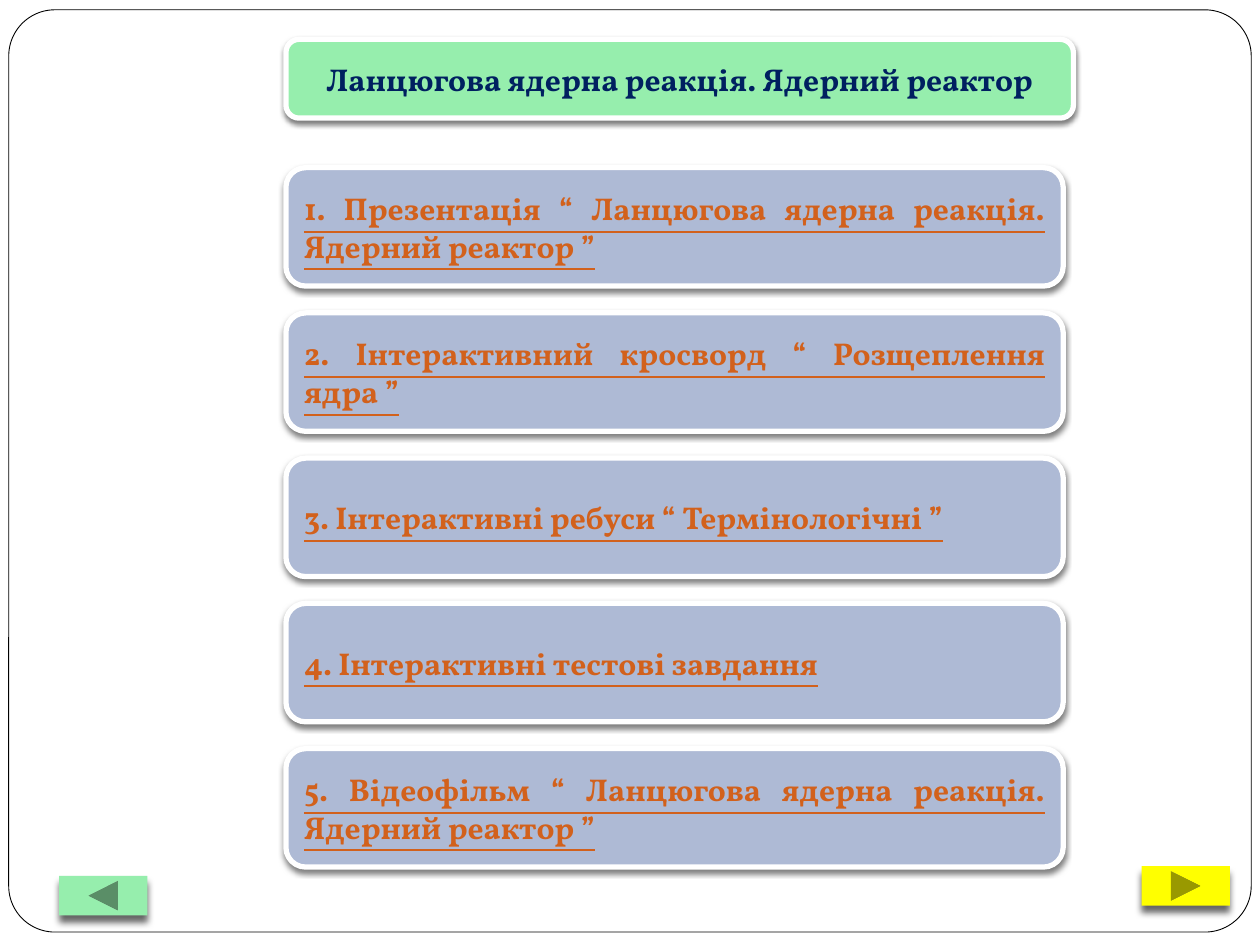
from lxml.etree import SubElement
from pptx import Presentation
from pptx.dml.color import RGBColor
from pptx.enum.shapes import MSO_SHAPE as Kind
from pptx.enum.text import MSO_ANCHOR as Anchor, PP_ALIGN as Align
from pptx.oxml.ns import qn
from pptx.util import Pt

TITLE = "Ланцюгова ядерна реакція. Ядерний реактор"
ITEMS = [
    "1. Презентація “ Ланцюгова ядерна реакція. Ядерний реактор ”",
    "2. Інтерактивний кросворд “ Розщеплення ядра ”",
    "3. Інтерактивні ребуси “ Термінологічні ”",
    "4. Інтерактивні тестові завдання",
    "5. Відеофільм “ Ланцюгова ядерна реакція. Ядерний реактор ”",
]

WHITE = RGBColor(0xFF, 0xFF, 0xFF)
BLACK = RGBColor(0, 0, 0)
GREEN = RGBColor(0x96, 0xEE, 0xAD)
YELLOW = RGBColor(0xFF, 0xFF, 0)
BLUE = RGBColor(0xAE, 0xBA, 0xD5)
NAVY = RGBColor(0, 0x20, 0x60)
RUST = RGBColor(0xD2, 0x61, 0x1C)

FONT = "Vollkorn"
LEFT, TOP, WIDE, HIGH, STEP = 163.4, 95.8, 444.2, 67.7, 83
CARD_GLOW = (50, 3, 2)
KEY_GLOW = (60, 4, 4)

deck = Presentation()
deck.slide_width, deck.slide_height = Pt(720), Pt(540)
slide = deck.slides.add_slide(deck.slide_layouts[6])


def add_shape(kind, box, fill, line=None, width=0, glow=None):
    shape = slide.shapes.add_shape(kind, *map(Pt, box))
    shape.fill.solid()
    shape.fill.fore_color.rgb = fill
    if line is None:
        shape.line.fill.background()
    else:
        shape.line.color.rgb = line
        shape.line.width = Pt(width)
    shape.shadow.inherit = False
    if glow:
        alpha, blur, dist = glow
        effects = shape._element.spPr.find(qn("a:effectLst"))
        outer = SubElement(effects, qn("a:outerShdw"), blurRad=str(Pt(blur)),
                           dist=str(Pt(dist)), dir="5400000", rotWithShape="0")
        tint = SubElement(outer, qn("a:srgbClr"), val=str(BLACK))
        SubElement(tint, qn("a:alpha"), val=str(alpha * 1000))
    return shape


def add_card(text, box, fill, ink, align, under=False):
    card = add_shape(Kind.FLOWCHART_ALTERNATE_PROCESS, box, fill, WHITE, 3, CARD_GLOW)
    frame = card.text_frame
    frame.text = text
    frame.word_wrap = True
    frame.vertical_anchor = Anchor.MIDDLE
    para = frame.paragraphs[0]
    para.alignment = align
    font = para.runs[0].font
    font.name, font.size, font.bold = FONT, Pt(18), True
    font.underline = under
    font.color.rgb = ink


border = add_shape(Kind.ROUNDED_RECTANGLE, (5, 5.6, 710, 527), WHITE, BLACK, 0.5)
border.adjustments[0] = 0.05

add_shape(Kind.ACTION_BUTTON_FORWARD_OR_NEXT, (652.4, 495, 50.4, 22.5),
          YELLOW, glow=KEY_GLOW)
add_card(TITLE, (LEFT, 22.5, 450, 45), GREEN, NAVY, Align.CENTER)
for row, item in enumerate(ITEMS):
    add_card(item, (LEFT, TOP + row * STEP, WIDE, HIGH), BLUE, RUST, Align.JUSTIFY, True)
add_shape(Kind.ACTION_BUTTON_BACK_OR_PREVIOUS, (33.8, 500.6, 50.4, 22.5),
          GREEN, glow=KEY_GLOW)

deck.save("out.pptx")
